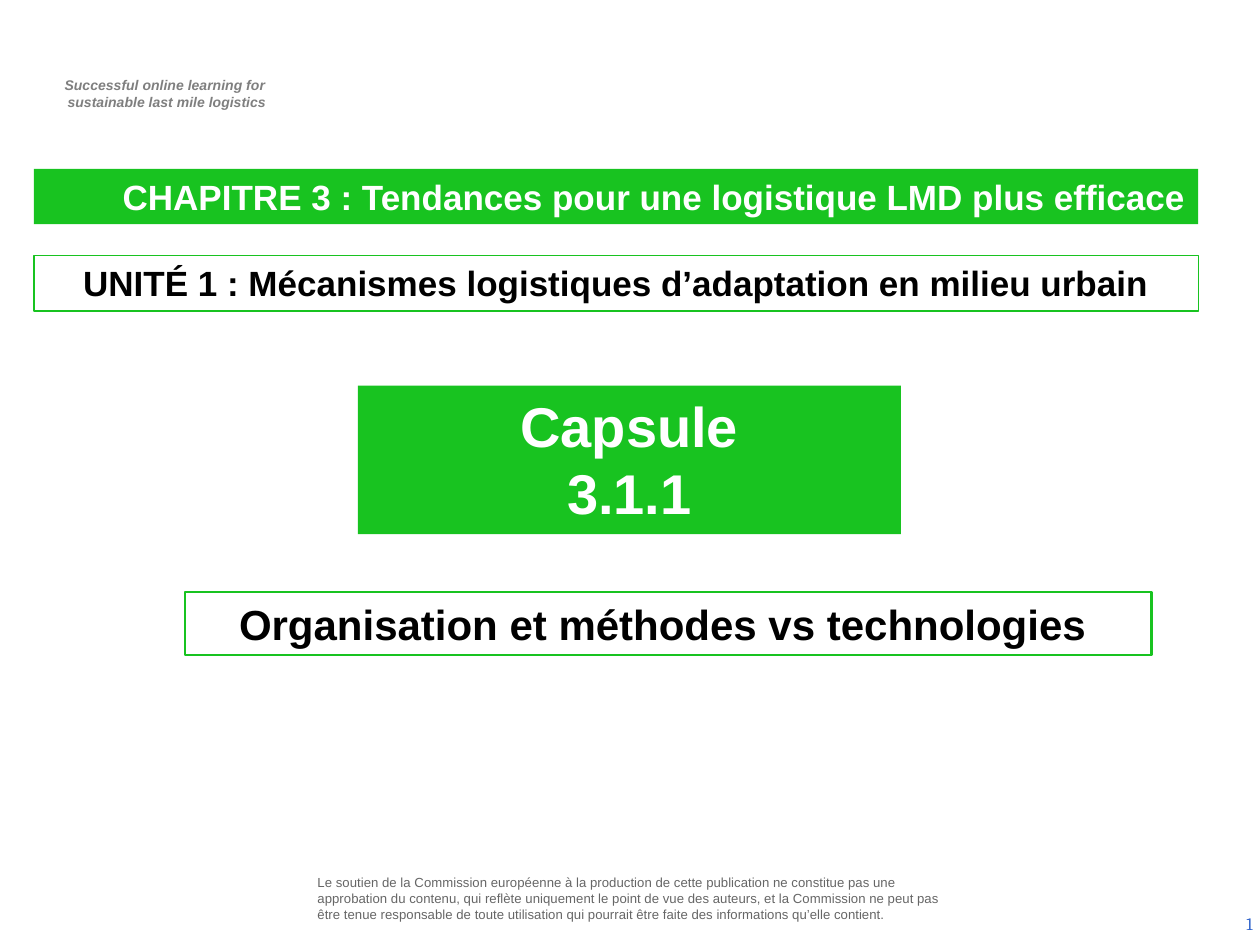
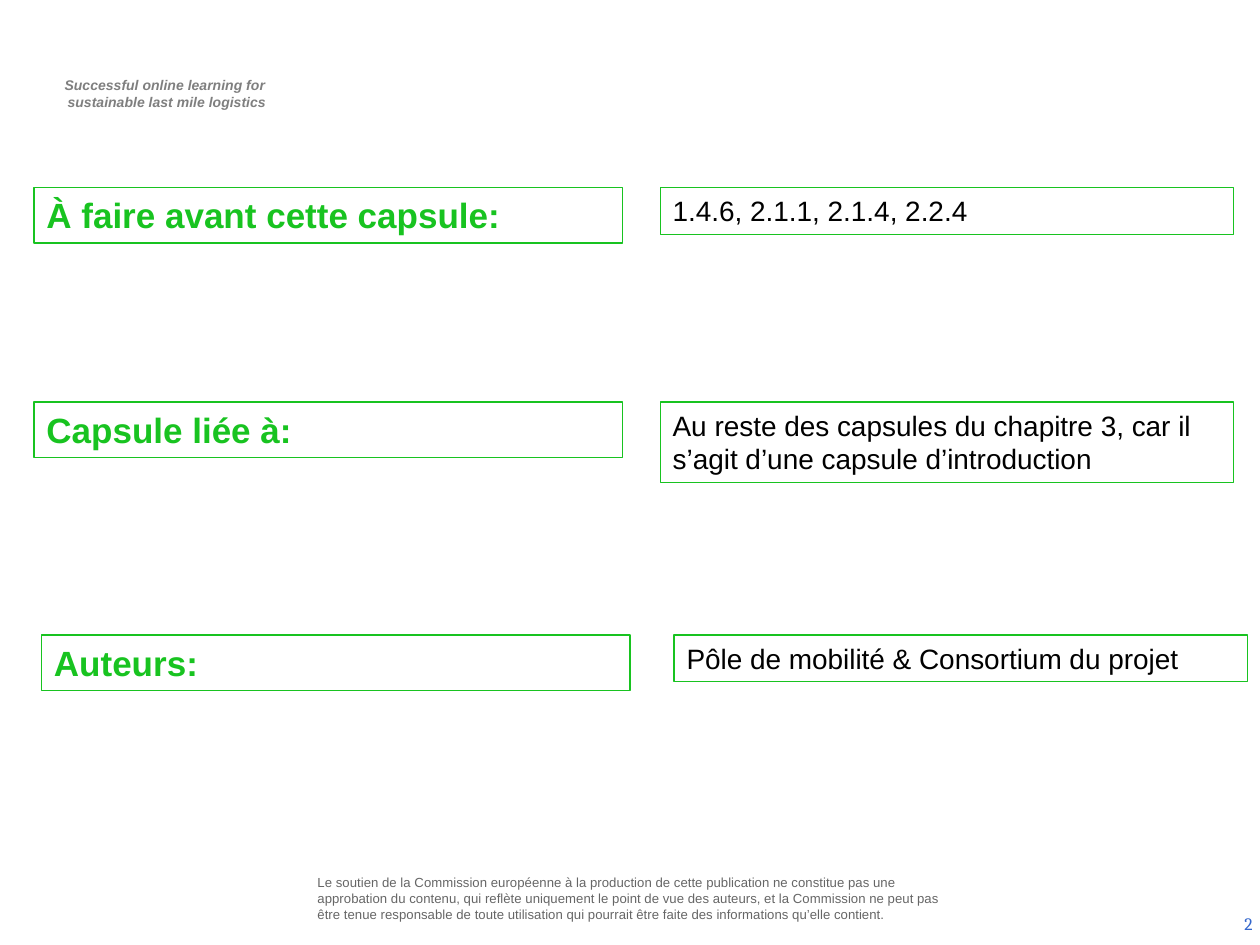
"""Build the two opening slides of the capsule on last mile logistics."""
from pptx import Presentation
from pptx.dml.color import RGBColor
from pptx.enum.shapes import MSO_SHAPE
from pptx.enum.text import MSO_ANCHOR, PP_ALIGN
from pptx.util import Inches, Pt

HUES = {"green": "18C320", "white": "FFFFFF", "black": "000000",
        "grey": "7F7F7F", "dim": "666666", "blue": "3366CC"}
LEFT, MID, RIGHT = PP_ALIGN.LEFT, PP_ALIGN.CENTER, PP_ALIGN.RIGHT
NOTE = ("Le soutien de la Commission européenne à la production de cette publication "
        "ne constitue pas une approbation du contenu, qui reflète uniquement le point "
        "de vue des auteurs, et la Commission ne peut pas être tenue responsable de "
        "toute utilisation qui pourrait être faite des informations qu’elle contient.")


def hue(name):
    return RGBColor.from_string(HUES[name])


def write(text, slide, at, size, color="black", font="Arial", bold=False,
          italic=False, align=LEFT, anchor=MSO_ANCHOR.TOP, pad=(0.1, 0.05),
          indent=0, fill=None, line=None):
    spot = [Inches(n) for n in at]
    if fill or line:
        box = slide.shapes.add_shape(MSO_SHAPE.RECTANGLE, *spot)
        box.shadow.inherit = False
        if fill:
            box.fill.solid()
            box.fill.fore_color.rgb = hue(fill)
        else:
            box.fill.background()
        if line:
            box.line.color.rgb = hue("green")
            box.line.width = Pt(line)
        else:
            box.line.fill.background()
    else:
        box = slide.shapes.add_textbox(*spot)
    frame = box.text_frame
    frame.word_wrap = True
    frame.vertical_anchor = anchor
    frame.margin_left = frame.margin_right = Inches(pad[0])
    frame.margin_top = frame.margin_bottom = Inches(pad[1])
    frame.text = text
    for para in frame.paragraphs:
        para.alignment = align
        if indent:
            para._p.get_or_add_pPr().set("marL", str(Inches(indent)))
        for run in para.runs:
            face = run.font
            face.name, face.size = font, Pt(size)
            face.bold, face.italic = bold, italic
            face.color.rgb = hue(color)


deck = Presentation()
deck.slide_width, deck.slide_height = Inches(10), Inches(7.5)
cover, guide = [deck.slides.add_slide(deck.slide_layouts[6]) for _ in range(2)]

for count, slide in enumerate((cover, guide), 1):
    write("Successful online learning for \nsustainable last mile logistics", slide,
          (0.29, 0.56, 2.03, 0.37), 8, "grey", bold=True, italic=True,
          align=MID, indent=0.04)
    write(NOTE, slide, (2.48, 6.88, 5.16, 0.5), 7.5, "dim",
          anchor=MSO_ANCHOR.MIDDLE, pad=(0.04, 0.04))
    write(str(count), slide, (7.71, 7.13, 2.33, 0.4), 10, "blue", font="Cambria",
          align=RIGHT, anchor=MSO_ANCHOR.MIDDLE)

write("Capsule\n3.1.1", cover, (2.84, 3.06, 4.31, 1.18), 32, "white",
      bold=True, align=MID, fill="green")
write("Organisation et méthodes vs technologies ", cover, (1.47, 4.7, 7.67, 0.5), 24,
      bold=True, align=MID, line=1.5)
write("CHAPITRE 3 : Tendances pour une logistique LMD plus efficace", cover,
      (0.27, 1.34, 9.24, 0.44), 20, "white", bold=True, align=RIGHT, fill="green")
write("UNITÉ 1 : Mécanismes logistiques d’adaptation en milieu urbain", cover,
      (0.27, 2.03, 9.24, 0.44), 20, bold=True, align=MID, line=0.75)

rows = [
    (1.49, 0.27, "À faire avant cette capsule:", 5.24, 0.37,
     "1.4.6, 2.1.1, 2.1.4, 2.2.4"),
    (3.19, 0.27, "Capsule liée à:", 5.24, 0.64,
     "Au reste des capsules du chapitre 3, car il s’agit d’une capsule d’introduction"),
    (5.04, 0.33, "Auteurs:", 5.35, 0.37, "Pôle de mobilité & Consortium du projet"),
]
for top, left, label, start, tall, answer in rows:
    write(label, guide, (left, top, 4.67, 0.44), 20, "green", bold=True,
          fill="white", line=0.75)
    write(answer, guide, (start, top, 4.55, tall), 16, fill="white", line=0.75)

deck.save("out.pptx")
